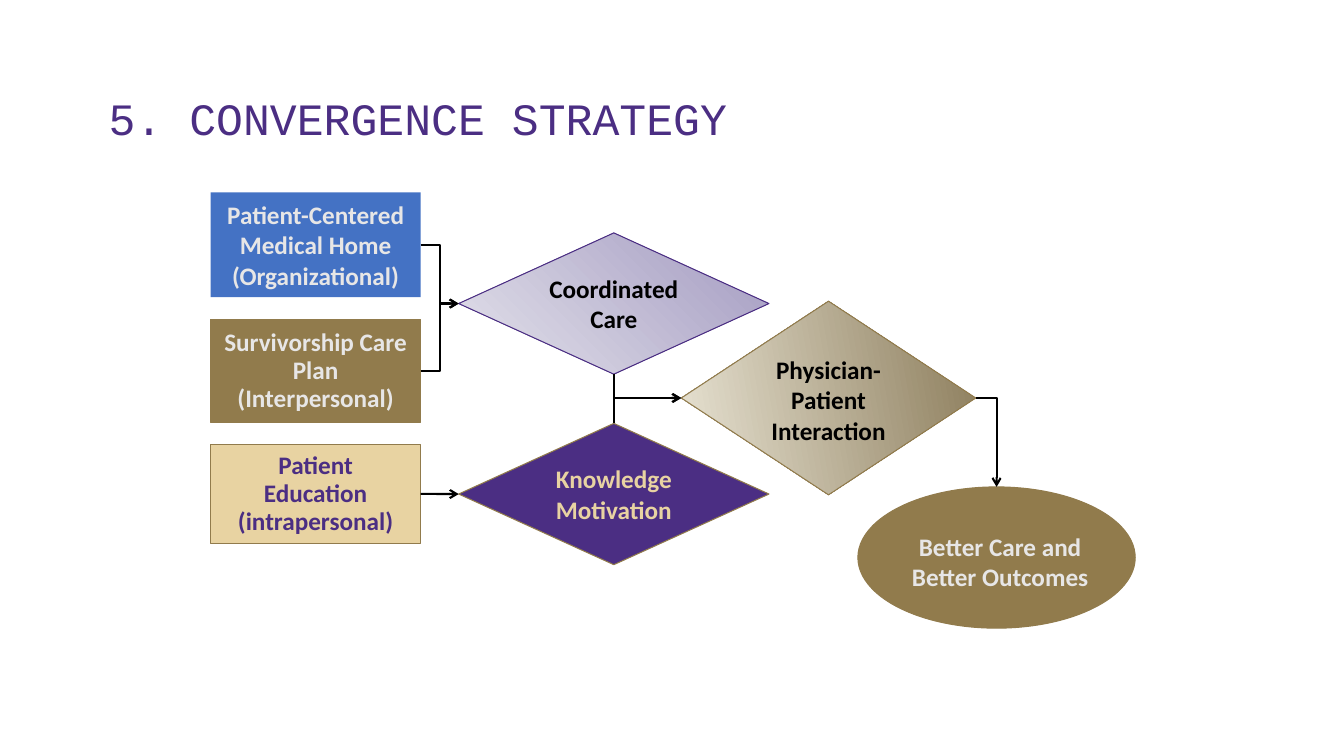
from dataclasses import dataclass

from lxml import etree
from pptx import Presentation
from pptx.dml.color import RGBColor
from pptx.enum.shapes import MSO_CONNECTOR, MSO_SHAPE
from pptx.enum.text import MSO_ANCHOR, PP_ALIGN
from pptx.oxml.ns import qn
from pptx.util import Cm, Pt

RECTANGLE, DIAMOND, OVAL = MSO_SHAPE.RECTANGLE, MSO_SHAPE.DIAMOND, MSO_SHAPE.OVAL
STRAIGHT, ELBOW = MSO_CONNECTOR.STRAIGHT, MSO_CONNECTOR.ELBOW
TOP, MIDDLE, BOTTOM = MSO_ANCHOR.TOP, MSO_ANCHOR.MIDDLE, MSO_ANCHOR.BOTTOM
LEFT, CENTER = PP_ALIGN.LEFT, PP_ALIGN.CENTER
TOP_SITE, LEFT_SITE, BOTTOM_SITE, RIGHT_SITE = range(4)


@dataclass(frozen=True)
class Theme:
    purple: str = "4B2E83"
    gold: str = "917B4C"
    sand: str = "E8D3A2"
    blue: str = "4472C4"
    pale: str = "E7E6E6"
    black: str = "000000"
    lilac_fade: tuple = ("A39BC1", "E4E2EB")
    gold_fade: tuple = ("8D7E5D", "E8E3D3")
    title_font: str = "Courier New"
    body_font: str = "Calibri"
    title_size: int = 32
    body_size: int = 18
    outline: float = 0.75
    arrow: float = 1.5


class FlowSlide:
    def __init__(self, deck, theme):
        self.theme = theme
        self.page = deck.slides.add_slide(deck.slide_layouts[6])

    def label(self, box, lines, color, anchor, spacing=None, align=CENTER, title=False):
        """Fill the box with one paragraph, with a line break between lines."""
        theme = self.theme
        frame = box.text_frame
        frame.word_wrap = True
        frame.vertical_anchor = anchor
        para = frame.paragraphs[0]
        para.alignment = align
        if spacing:
            para.line_spacing = spacing
        if not title:
            para.space_after = Pt(10)
        for number, line in enumerate(lines):
            if number:
                para.add_line_break()
            span = para.add_run()
            span.text = line
            span.font.name = theme.title_font if title else theme.body_font
            span.font.size = Pt(theme.title_size if title else theme.body_size)
            span.font.bold = not title
            span.font.color.rgb = RGBColor.from_string(color)

    def text(self, place, lines, color, anchor=TOP, **style):
        box = self.page.shapes.add_textbox(*map(Cm, place))
        self.label(box, lines, color, anchor, **style)

    def node(self, kind, place, fill, line=None, angle=0):
        """Draw a shape; a pair of fill colours makes a gradient at the angle."""
        box = self.page.shapes.add_shape(kind, *map(Cm, place))
        box.shadow.inherit = False
        if isinstance(fill, tuple):
            box.fill.gradient()
            box.fill.gradient_angle = angle
            for stop, color in zip(box.fill.gradient_stops, fill):
                stop.color.rgb = RGBColor.from_string(color)
        else:
            box.fill.solid()
            box.fill.fore_color.rgb = RGBColor.from_string(fill)
        if line:
            box.line.color.rgb = RGBColor.from_string(line)
            box.line.width = Pt(self.theme.outline)
        else:
            box.line.fill.background()
        return box

    def link(self, start, start_site, end, end_site, kind=ELBOW, corner=False, arrow_at="tailEnd"):
        """Join two shapes; corner gives one bend, across first and then along."""
        link = self.page.shapes.add_connector(kind, 0, 0, 0, 0)
        link.begin_connect(start, start_site)
        link.end_connect(end, end_site)
        link.line.color.rgb = RGBColor.from_string(self.theme.black)
        link.line.width = Pt(self.theme.arrow)
        properties = link._element.spPr
        if corner:
            properties.find(qn("a:prstGeom")).set("prst", "bentConnector2")
        etree.SubElement(properties.find(qn("a:ln")), qn(f"a:{arrow_at}"), type="arrow")
        etree.SubElement(properties, qn("a:effectLst"))


def main():
    deck = Presentation()
    deck.slide_width, deck.slide_height = Cm(33.87), Cm(19.05)
    theme = Theme()
    slide = FlowSlide(deck, theme)

    slide.text((2.49, 1.04, 30.3, 2.74), ["5. CONVERGENCE STRATEGY"], theme.purple,
               BOTTOM, spacing=0.9, align=LEFT, title=True)

    source_left, source_width = 5.31, 5.29
    medical_home = slide.node(RECTANGLE, (source_left, 4.85, source_width, 2.64), theme.blue)
    slide.label(medical_home, ["Patient-Centered Medical Home", "(Organizational)"],
                theme.pale, MIDDLE)
    care_plan = slide.node(RECTANGLE, (source_left, 8.05, source_width, 2.59),
                           theme.gold, theme.gold)
    slide.label(care_plan, ["Survivorship Care Plan (Interpersonal)"],
                theme.pale, MIDDLE, Pt(20))
    education = slide.node(RECTANGLE, (source_left, 11.2, source_width, 2.49),
                           theme.sand, theme.gold)
    education.text_frame.margin_left = education.text_frame.margin_right = Cm(0.55)
    slide.label(education, ["Patient Education", "(intrapersonal)"],
                theme.purple, MIDDLE, Pt(20))

    middle_left, middle_size = 11.56, (7.82, 3.56)
    coordinated = slide.node(DIAMOND, (middle_left, 5.87, *middle_size),
                             theme.lilac_fade, theme.purple, 225)
    slide.label(coordinated, ["Coordinated Care"], theme.black, TOP)
    knowledge = slide.node(DIAMOND, (middle_left, 10.67, *middle_size),
                           theme.purple, theme.gold)
    slide.label(knowledge, ["Knowledge Motivation"], theme.sand, TOP)
    interaction = slide.node(DIAMOND, (17.17, 7.59, 7.42, 4.88),
                             theme.gold_fade, theme.gold, 190)
    slide.label(interaction, ["Physician-Patient Interaction"], theme.black, TOP)

    outcome = slide.node(OVAL, (21.62, 12.27, 6.99, 3.56), theme.gold, theme.gold)
    slide.text((22.45, 13.26, 5.51, 1.96), ["Better Care and Better Outcomes"], theme.pale)

    for source in (medical_home, care_plan):
        slide.link(source, RIGHT_SITE, coordinated, LEFT_SITE)
    slide.link(education, RIGHT_SITE, knowledge, LEFT_SITE, STRAIGHT)
    for diamond, site in ((coordinated, BOTTOM_SITE), (knowledge, TOP_SITE)):
        slide.link(interaction, LEFT_SITE, diamond, site, corner=True, arrow_at="headEnd")
    slide.link(interaction, RIGHT_SITE, outcome, TOP_SITE, corner=True)

    deck.save("out.pptx")


if __name__ == "__main__":
    main()
